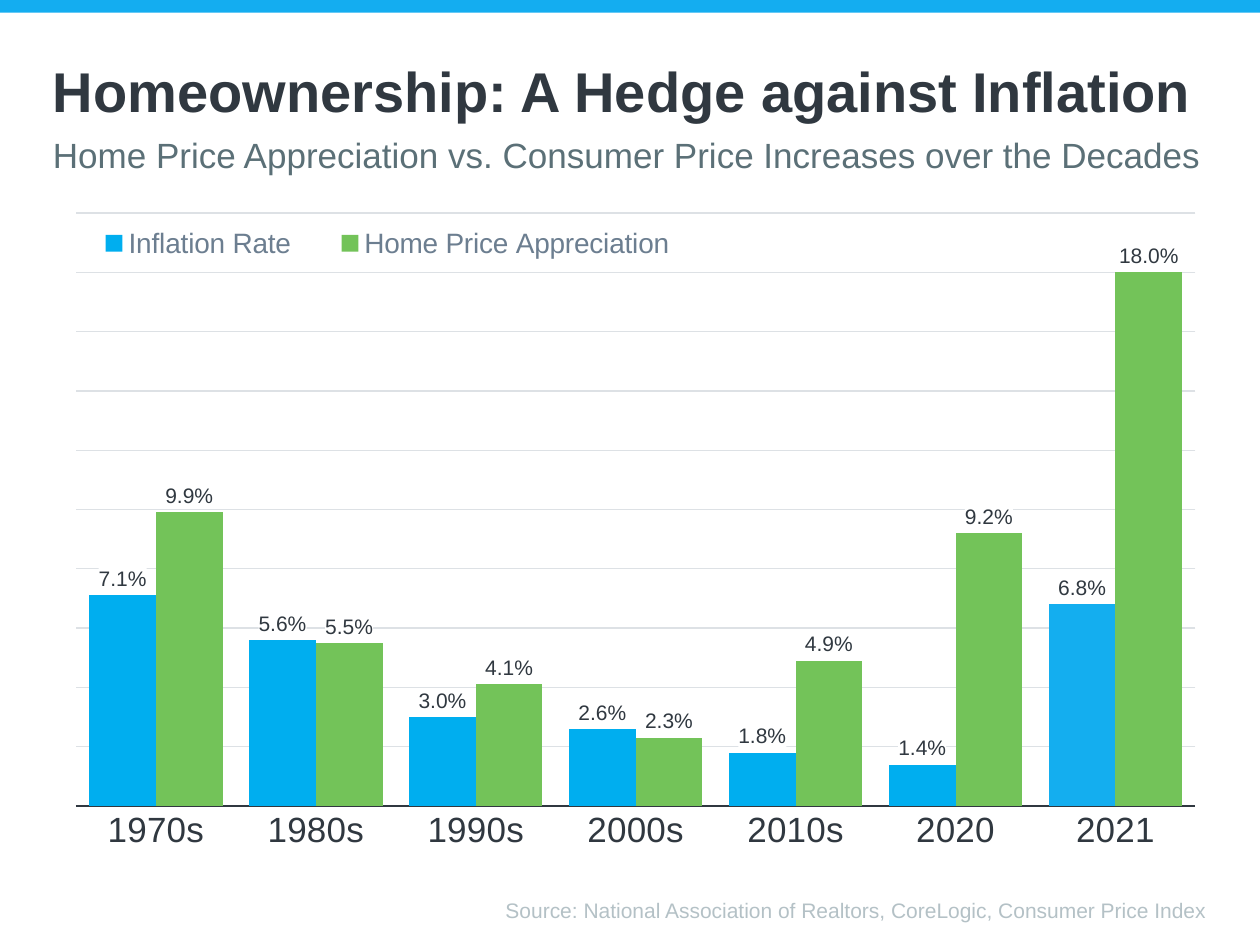
from lxml import etree
from pptx import Presentation
from pptx.chart.data import CategoryChartData
from pptx.dml.color import RGBColor
from pptx.enum.chart import XL_CHART_TYPE, XL_LABEL_POSITION, XL_LEGEND_POSITION, XL_TICK_MARK
from pptx.enum.shapes import MSO_SHAPE
from pptx.enum.text import MSO_ANCHOR, MSO_AUTO_SIZE, PP_ALIGN
from pptx.oxml import parse_xml
from pptx.oxml.ns import nsdecls, qn
from pptx.util import Inches, Pt

COLUMNS = XL_CHART_TYPE.COLUMN_CLUSTERED
OUTSIDE_END = XL_LABEL_POSITION.OUTSIDE_END
LEGEND_BOTTOM = XL_LEGEND_POSITION.BOTTOM
NO_TICK = XL_TICK_MARK.NONE
RECTANGLE = MSO_SHAPE.RECTANGLE
TOP = MSO_ANCHOR.TOP
LEFT, RIGHT = PP_ALIGN.LEFT, PP_ALIGN.RIGHT

DARK = "303840"
FONT = "Arial"
PERCENT = "0.0%"

presentation = Presentation()
presentation.slide_width = Inches(10)
presentation.slide_height = Inches(7.5)
slide = presentation.slides.add_slide(presentation.slide_layouts[5])
MARGIN = Inches(0.42)
CONTENT_WIDTH = presentation.slide_width - 2 * MARGIN


def style_font(font, size, color, bold=False):
    font.name = FONT
    font.size = Pt(size)
    font.bold = bold
    font.color.rgb = RGBColor.from_string(color)


def set_layout(parent, successors, x, y, width, height, inner=False):
    """Place a chart part by shares of the chart's width and height."""
    for old in parent.findall(qn("c:layout")):
        parent.remove(old)
    target = '<c:layoutTarget val="inner"/>' if inner else ""
    layout = parse_xml(
        f'<c:layout {nsdecls("c")}><c:manualLayout>{target}'
        '<c:xMode val="edge"/><c:yMode val="edge"/>'
        f'<c:x val="{x}"/><c:y val="{y}"/><c:w val="{width}"/><c:h val="{height}"/>'
        "</c:manualLayout></c:layout>")
    following = next(child for child in parent if child.tag in map(qn, successors))
    following.addprevious(layout)


# Top band
band = slide.shapes.add_shape(RECTANGLE, 0, 0, presentation.slide_width, Inches(0.1))
band.shadow.inherit = False
band.fill.solid()
band.fill.fore_color.rgb = RGBColor.from_string("14ADF0")
band.line.fill.background()

# Title, subtitle and source
title = slide.shapes.title
subtitle = slide.shapes.add_textbox(0, 0, 0, 0)
source = slide.shapes.add_textbox(0, 0, 0, 0)
texts = [
    (title, "Homeownership: A Hedge against Inflation", 0.45, 0.39, 32, DARK, True, LEFT),
    (subtitle, "Home Price Appreciation vs. Consumer Price Increases over the Decades",
     1.06, 0.34, 20, "5B7077", False, LEFT),
    (source, "Source: National Association of Realtors, CoreLogic, Consumer Price Index",
     7.12, 0.24, 12, "B4C1C6", False, RIGHT),
]
for shape, text, top, height, size, color, bold, alignment in texts:
    shape.left, shape.width = MARGIN, CONTENT_WIDTH
    shape.top, shape.height = Inches(top), Inches(height)
    frame = shape.text_frame
    frame.word_wrap = True
    frame.auto_size = MSO_AUTO_SIZE.NONE
    frame.vertical_anchor = TOP
    frame.margin_left = frame.margin_right = frame.margin_top = frame.margin_bottom = 0
    frame.text = text
    paragraph = frame.paragraphs[0]
    paragraph.alignment = alignment
    style_font(paragraph.font, size, color, bold)

# Chart
data = CategoryChartData(number_format=PERCENT)
data.categories = ["1970s", "1980s", "1990s", "2000s", "2010s", "2020", "2021"]
data.add_series("Inflation Rate", [0.071, 0.056, 0.03, 0.026, 0.018, 0.014, 0.068])
data.add_series("Home Price Appreciation", [0.099, 0.055, 0.041, 0.023, 0.049, 0.092, 0.18])
chart = slide.shapes.add_chart(
    COLUMNS, MARGIN, Inches(1.53), CONTENT_WIDTH, Inches(5.35), data).chart
chart.has_title = False
style_font(chart.font, 10, DARK)

plot = chart.plots[0]
plot.gap_width = 40
plot.overlap = 0
plot.vary_by_categories = False
for series, color in zip(plot.series, ["00AEEF", "73C359"]):
    series.format.fill.solid()
    series.format.fill.fore_color.rgb = RGBColor.from_string(color)
    series.invert_if_negative = False
    labels = series.data_labels
    labels.show_value = True
    labels.position = OUTSIDE_END
    labels.number_format = PERCENT
    labels.number_format_is_linked = False
    style_font(labels.font, 12, DARK)
    # White label background hides the gridlines behind the numbers
    background = etree.Element(qn("c:spPr"))
    fill = etree.SubElement(background, qn("a:solidFill"))
    etree.SubElement(fill, qn("a:srgbClr"), val="FFFFFF")
    labels.font._element.getparent().getparent().getparent().addprevious(background)

latest_inflation = plot.series[0].points[6].format.fill
latest_inflation.solid()
latest_inflation.fore_color.rgb = RGBColor.from_string("14AEEF")

category_axis = chart.category_axis
category_axis.major_tick_mark = NO_TICK
category_axis.format.line.color.rgb = RGBColor.from_string(DARK)
category_axis.format.line.width = Pt(1)
style_font(category_axis.tick_labels.font, 20, DARK)

value_axis = chart.value_axis
value_axis.minimum_scale = 0
value_axis.maximum_scale = 0.2
value_axis.major_unit = 0.02
value_axis.has_major_gridlines = True
value_axis.major_gridlines.format.line.color.rgb = RGBColor.from_string("DDE1E5")
value_axis.major_gridlines.format.line.width = Pt(0.75)
value_axis.visible = False

chart.has_legend = True
legend = chart.legend
legend.position = LEGEND_BOTTOM
legend.include_in_layout = True
style_font(legend.font, 16, "6C7E90")
set_layout(legend._element, ["c:overlay"], 0.01, 0.04, 0.56, 0.07)
set_layout(plot._element.getparent(), ["c:barChart"], 0.02, 0.03, 0.97, 0.88, inner=True)

presentation.save("out.pptx")
